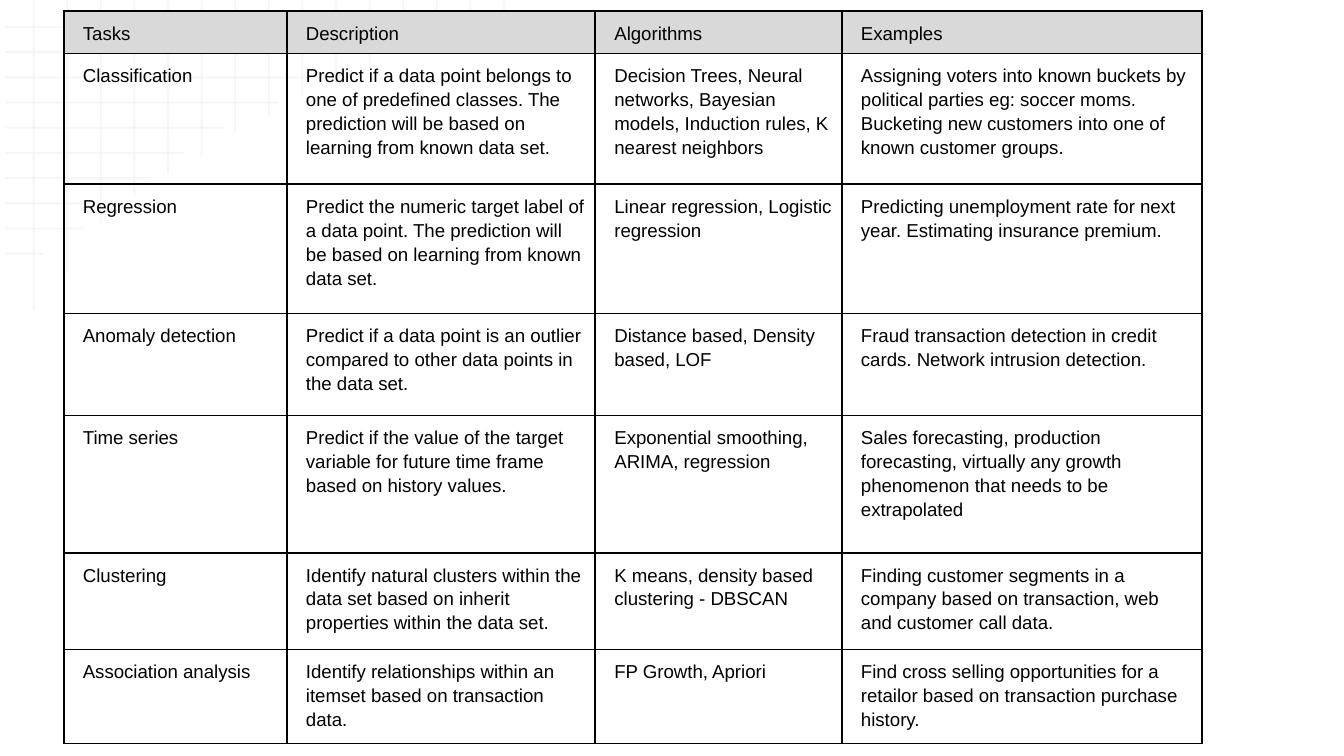
from dataclasses import dataclass

from lxml.etree import SubElement
from pptx import Presentation
from pptx.dml.color import RGBColor
from pptx.enum.shapes import MSO_CONNECTOR
from pptx.oxml import parse_xml
from pptx.oxml.ns import nsdecls, qn
from pptx.util import Inches, Pt

COLORS = {"grid": "EFEFEF", "text": "000000", "border": "000000", "header": "D9D9D9"}
FONT = "Arial"
INSET = Inches(0.07)
INDENT = Pt(5.25)

# Widescreen slide, 16:9
prs = Presentation()
prs.slide_width = Inches(10)
prs.slide_height = prs.slide_width * 9 // 16
s = prs.slides.add_slide(prs.slide_layouts[6])


def across(percent: float) -> int:
    """Share of the slide's width."""
    return int(prs.slide_width * percent / 100)


def down(percent: float) -> int:
    """Share of the slide's height."""
    return int(prs.slide_height * percent / 100)


@dataclass
class GridLine:
    """Ends in columns (40 across the slide) and rows (30 down it)."""
    col1: float
    row1: float
    col2: float
    row2: float


@dataclass
class Task:
    height: float  # percent of the slide's height
    name: str
    description: str
    algorithms: str
    examples: str

    def texts(self) -> list[str]:
        return [self.name, self.description, self.algorithms, self.examples]


def draw_grid_line(shapes, line: GridLine) -> None:
    ends = (across(line.col1 * 2.5), down(line.row1 / 0.3),
            across(line.col2 * 2.5), down(line.row2 / 0.3))
    c = shapes.add_connector(MSO_CONNECTOR.STRAIGHT, *ends)
    c.line.width = Pt(1)
    c.line.color.rgb = RGBColor.from_string(COLORS["grid"])
    color = c.line._ln.find(".//" + qn("a:srgbClr"))
    SubElement(color, qn("a:alpha"), val="54000")
    SubElement(c._element.spPr, qn("a:effectLst"))


def add_borders(cell) -> None:
    tc_pr = cell._tc.get_or_add_tcPr()
    for i, side in enumerate("LRTB"):
        tc_pr.insert(i, parse_xml(
            f'<a:ln{side} {nsdecls("a")} w="{Pt(1)}"><a:solidFill>'
            f'<a:srgbClr val="{COLORS["border"]}"/></a:solidFill></a:ln{side}>'))


def fill_cell(cell, text: str, is_header: bool) -> None:
    cell.margin_left = cell.margin_right = INSET
    cell.margin_top = cell.margin_bottom = INSET
    if is_header:
        cell.fill.solid()
        cell.fill.fore_color.rgb = RGBColor.from_string(COLORS["header"])
    else:
        cell.fill.background()
    add_borders(cell)
    p = cell.text_frame.paragraphs[0]
    p.text = text
    p.line_spacing = 1.15
    p._p.get_or_add_pPr().set("marL", str(INDENT))
    p.font.name = FONT
    p.font.size = Pt(10)
    p.font.color.rgb = RGBColor.from_string(COLORS["text"])


def draw_table(shapes, tasks: list[Task], left: float, top: float,
               widths: list[float]) -> None:
    frame = shapes.add_table(len(tasks), len(widths), across(left), down(top),
                             across(sum(widths)), down(sum(t.height for t in tasks)))
    table = frame.table
    table.first_row = table.horz_banding = False
    for column, width in zip(table.columns, widths):
        column.width = across(width)
    for i, task in enumerate(tasks):
        table.rows[i].height = down(task.height)
        for j, text in enumerate(task.texts()):
            fill_cell(table.cell(i, j), text, is_header=i == 0)


# Faint background grid, fading out from the top left corner
ROW_ENDS = [14.36, 11.8, 9.64, 8.28, 6.68, 5.48, 4.48, 3.4, 2.48, 1.28]
COLUMN_ENDS = [12.28, 10.84, 8.86, 7.74, 6.89, 6.19, 5.29, 4.59,
               3.84, 3.31, 2.56, 1.76, 1.28, 0.91, 0.75]
grid = [GridLine(0.16, row + 0.07, end, row + 0.07)
        for row, end in enumerate(ROW_ENDS, 1)]
grid += [GridLine(col, end, col, 0) for col, end in enumerate(COLUMN_ENDS, 1)]
group = s.shapes.add_group_shape()
for grid_line in grid:
    draw_grid_line(group.shapes, grid_line)

# Table of data mining tasks
TASKS = [
    Task(5.65, "Tasks", "Description", "Algorithms", "Examples"),
    Task(17.3, "Classification",
         "Predict if a data point belongs to one of predefined classes. "
         "The prediction will be based on learning from known data set.",
         "Decision Trees, Neural networks, Bayesian models, Induction rules, "
         "K nearest neighbors",
         "Assigning voters into known buckets by political parties eg: soccer moms. "
         "Bucketing new customers into one of known customer groups."),
    Task(17.1, "Regression",
         "Predict the numeric target label of a data point. "
         "The prediction will be based on learning from known data set.",
         "Linear regression, Logistic regression",
         "Predicting unemployment rate for next year. Estimating insurance premium."),
    Task(13.5, "Anomaly detection",
         "Predict if a data point is an outlier compared to other data points "
         "in the data set.",
         "Distance based, Density based, LOF",
         "Fraud transaction detection in credit cards. Network intrusion detection."),
    Task(18.15, "Time series",
         "Predict if the value of the target variable for future time frame "
         "based on history values.",
         "Exponential smoothing, ARIMA, regression",
         "Sales forecasting, production forecasting, virtually any growth "
         "phenomenon that needs to be extrapolated"),
    Task(12.8, "Clustering",
         "Identify natural clusters within the data set based on inherit "
         "properties within the data set.",
         "K means, density based clustering - DBSCAN",
         "Finding customer segments in a company based on transaction, web "
         "and customer call data."),
    Task(12.45, "Association analysis",
         "Identify relationships within an itemset based on transaction data.",
         "FP Growth, Apriori",
         "Find cross selling opportunities for a retailor based on transaction "
         "purchase history."),
]
draw_table(s.shapes, TASKS, left=4.74, top=1.42, widths=[16.6, 22.95, 18.35, 26.8])

prs.save("out.pptx")
